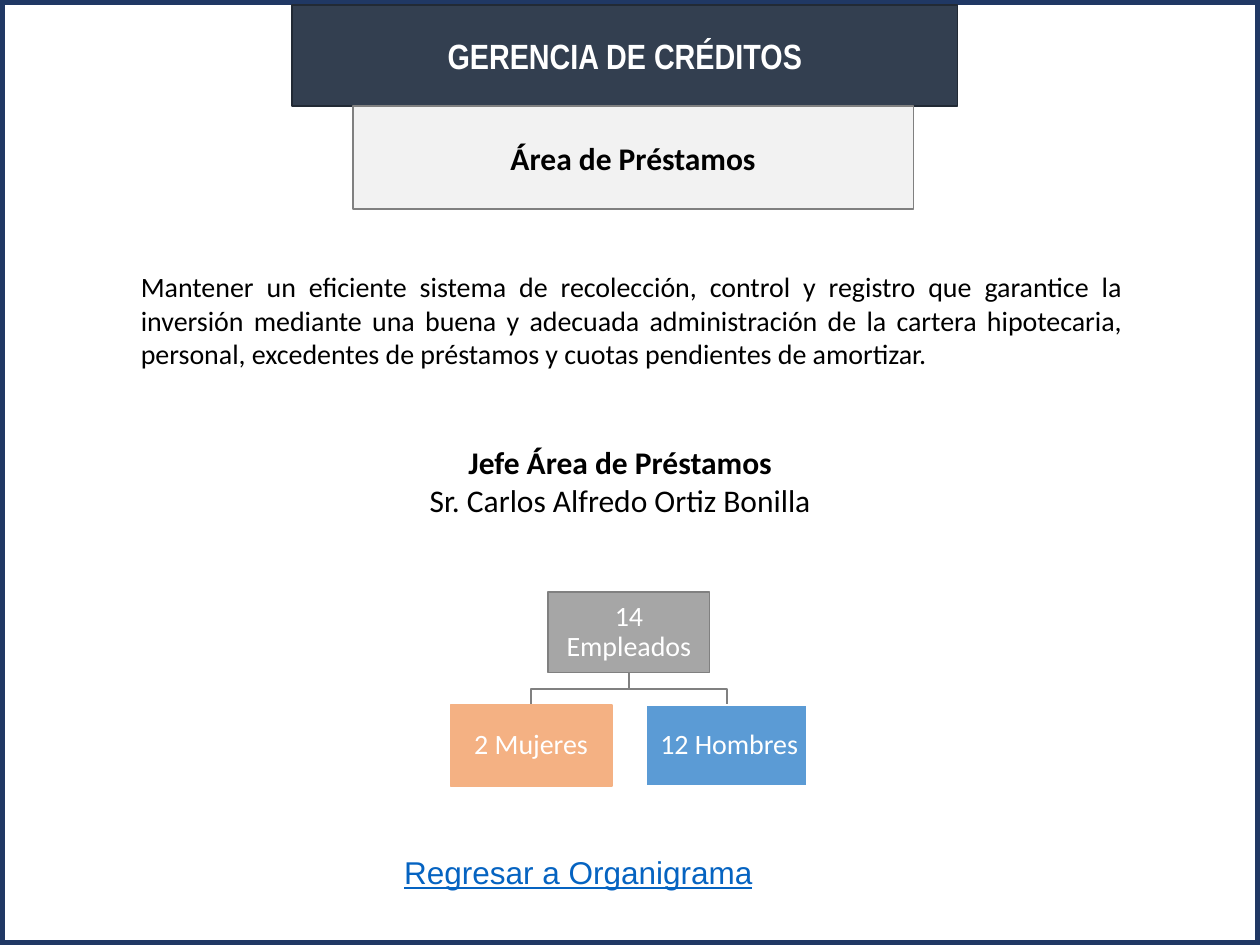
from pptx import Presentation
from pptx import util as u
from pptx.dml.color import RGBColor
from pptx.enum import shapes, text

HUE = {"frame": "203864", "navy": "333F50", "edge": "222A35", "pale": "F2F2F2",
       "gray": "A6A6A6", "line": "808080", "peach": "F4B183", "blue": "5B9BD5",
       "link": "0563C1", "white": "FFFFFF", "black": "000000"}
MID, LEFT, JUST = (text.PP_ALIGN.CENTER, text.PP_ALIGN.LEFT, text.PP_ALIGN.JUSTIFY)

HEADS = [
    ((167, 2.9, 380.2, 57.6), "navy", "edge",
     ("GERENCIA DE CRÉDITOS", 20, "Arial Narrow", "white", True)),
    ((201.6, 60.5, 320.4, 59), "pale", "line",
     ("Área de Préstamos", 18, "Calibri", "black", True)),
]
GOAL = ("Mantener un eficiente sistema de recolección, control y registro que "
        "garantice la inversión mediante una buena y adecuada administración de "
        "la cartera hipotecaria, personal, excedentes de préstamos y cuotas "
        "pendientes de amortizar.")
NOTES = [
    ((73.4, 150.5, 575.3, 67.7), JUST, [(GOAL, 16, "Calibri", "black", False)]),
    ((218.2, 249.8, 297.4, 72.7), MID,
     [("Jefe Área de Préstamos", 18, "Calibri", "black", True),
      ("Sr. Carlos Alfredo Ortiz Bonilla", 18, "Calibri", "black", False)]),
    ((223.9, 483.8, 235.4, 28.8), LEFT,
     [("Regresar a Organigrama", 18, "Arial", "link", False)]),
]
STAFF = ("14 Empleados", "gray", "line", 0)
PARTS = [("2 Mujeres", "peach", "peach", 0), ("12 Hombres", "blue", "white", 3)]
WIDE, HIGH, STEP = 92.3, 46.1, 111.7
AXIS, TOP, DROP = 359.4, 338.2, 64.9

deck = Presentation()
deck.slide_width, deck.slide_height = u.Pt(720), u.Pt(540)
slide = deck.slides.add_slide(deck.slide_layouts[6])


def tint(name):
    return RGBColor.from_string(HUE[name])


def paint(shape, fill, line, width=1):
    shape.shadow.inherit = False
    if fill:
        shape.fill.solid()
        shape.fill.fore_color.rgb = tint(fill)
    else:
        shape.fill.background()
    shape.line.color.rgb = tint(line)
    shape.line.width = u.Pt(width)


def box(area, fill, line, width=1):
    shape = slide.shapes.add_shape(shapes.MSO_SHAPE.RECTANGLE, *map(u.Pt, area))
    paint(shape, fill, line, width)
    return shape


def write(frame, items, align):
    frame.word_wrap = True
    for i, (words, size, face, hue, bold) in enumerate(items):
        para = frame.add_paragraph() if i else frame.paragraphs[0]
        para.alignment = align
        run = para.add_run()
        run.text = words
        font = run.font
        font.size, font.name, font.bold = u.Pt(size), face, bold
        font.color.rgb = tint(hue)
        font.underline = hue == "link"


def node(x, y, item):
    words, fill, line, shift = item
    frame = box((x - WIDE / 2, y, WIDE, HIGH), fill, line).text_frame
    write(frame, [(words, 16, "Calibri", "white", False)], MID)
    frame.vertical_anchor = text.MSO_ANCHOR.MIDDLE
    frame.margin_top = frame.margin_bottom = u.Pt(1)
    frame.margin_left, frame.margin_right = u.Pt(2 + shift), u.Pt(2)
    frame.paragraphs[0].line_spacing = 0.9


def link(x):
    start, end = TOP + HIGH, TOP + DROP
    half = (start + end) / 2
    pen = slide.shapes.build_freeform(u.Pt(AXIS), u.Pt(start))
    spots = [(AXIS, half), (x, half), (x, end)]
    pen.add_line_segments([(u.Pt(a), u.Pt(b)) for a, b in spots], close=False)
    paint(pen.convert_to_shape(), None, "line")


box((0, 0, 720, 540), None, "frame", 6)

for area, fill, line, item in HEADS:
    frame = box(area, fill, line).text_frame
    frame.vertical_anchor = text.MSO_ANCHOR.MIDDLE
    write(frame, [item], MID)

for area, align, items in NOTES:
    note = slide.shapes.add_textbox(*map(u.Pt, area))
    write(note.text_frame, items, align)
    if align == MID:
        first = note.text_frame.paragraphs[0]
        first._p.get_or_add_pPr().set("marR", str(u.Pt(25)))

spots = [AXIS + (i - 0.5) * STEP for i in range(len(PARTS))]
for x in spots:
    link(x)
node(AXIS, TOP, STAFF)
for x, item in zip(spots, PARTS):
    node(x, TOP + DROP, item)

deck.save("out.pptx")
